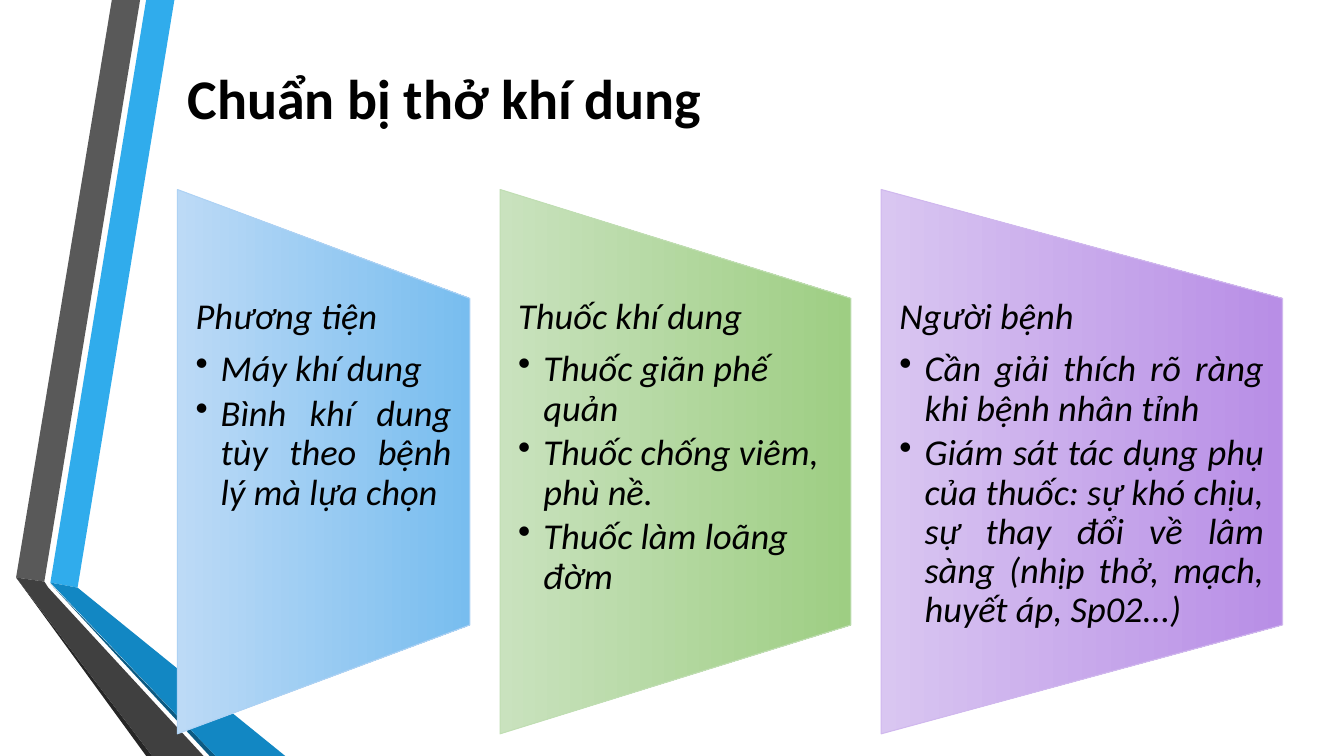
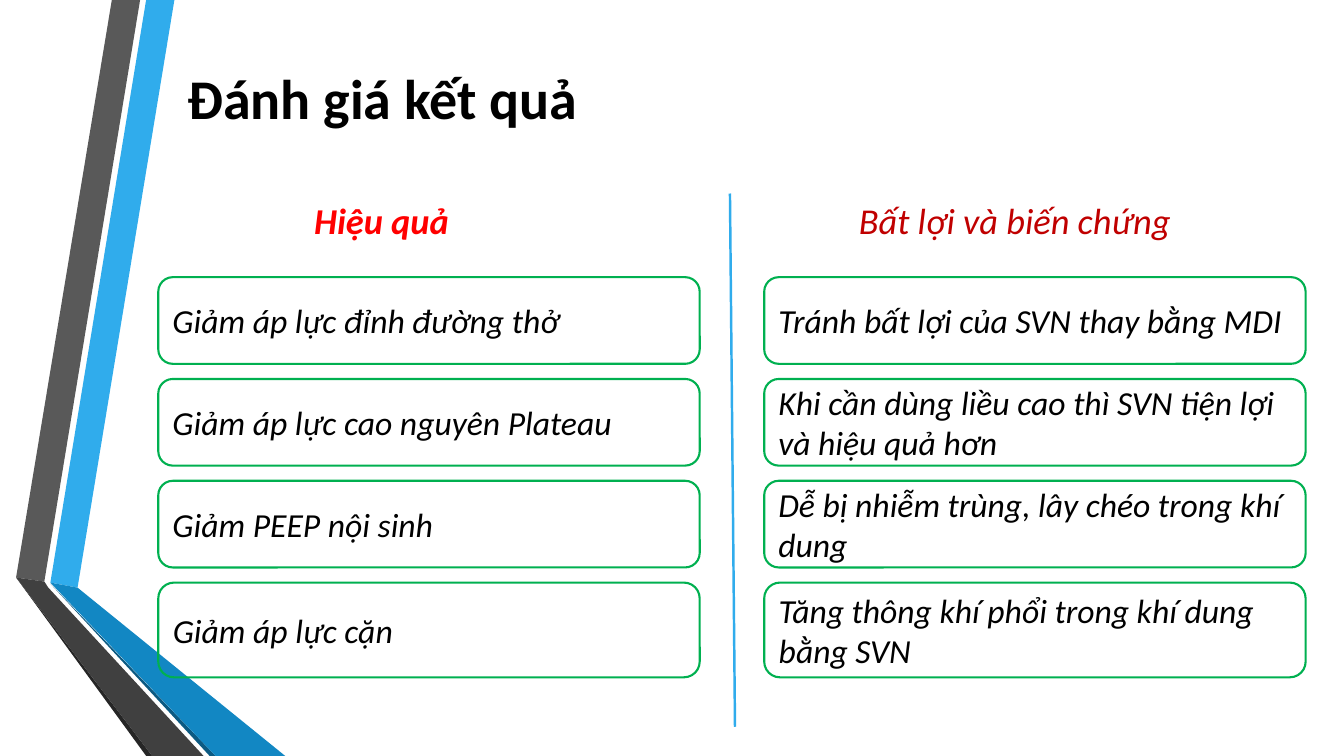
from dataclasses import dataclass

import pptx
import pptx.dml.color
import pptx.enum.shapes
import pptx.enum.text
import pptx.oxml.ns
import pptx.util
from lxml import etree

Inches = pptx.util.Inches
Pt = pptx.util.Pt
Shape = pptx.enum.shapes.MSO_SHAPE
Align = pptx.enum.text.PP_ALIGN
Anchor = pptx.enum.text.MSO_ANCHOR


@dataclass(frozen=True)
class Theme:
    font: str = "Calibri"
    title_size: float = 40
    heading_size: float = 26
    box_size: float = 24
    text: str = "000000"
    accent: str = "30ACEC"
    outline: str = "00B050"
    benefit: str = "FF0000"
    drawback: str = "C00000"
    blue: tuple = ("BCDAF6", "78BDEF", "AED2F4")
    green: tuple = ("C9E2BE", "9ECE83", "C0DEB3")
    violet: tuple = ("D9C6F1", "B88EE6", "D0B8EE")


THEME = Theme()

BANDS = [
    (THEME.accent, [(0.5, 5.78), (0.77, 5.83), (1.73, 0), (1.45, 0)]),
    ("595959", [(1.39, 0), (1.11, 0), (0.16, 5.73), (0.44, 5.77)]),
    ("262626", [(0.16, 5.73), (1.45, 7.5), (1.51, 7.5)]),
    ("0C5A82", [(0.5, 5.79), (2.08, 7.5), (2.14, 7.5)]),
    ("1287C3", [(0.5, 5.78), (2.14, 7.5), (2.83, 7.5), (0.77, 5.83)]),
    ("404040", [(2.02, 7.5), (0.48, 5.83), (0.44, 5.77), (0.16, 5.73), (1.51, 7.5)]),
]

CARDS = [
    (2.9, THEME.blue, Align.JUSTIFY, "Phương tiện",
     ["Máy khí dung", "Bình khí dung tùy theo bệnh lý mà lựa chọn"]),
    (3.48, THEME.green, Align.LEFT, "Thuốc khí dung",
     ["Thuốc giãn phế quản", "Thuốc chống viêm, phù nề.", "Thuốc làm loãng đờm"]),
    (3.98, THEME.violet, Align.JUSTIFY, "Người bệnh",
     ["Cần giải thích rõ ràng khi bệnh nhân tỉnh",
      "Giám sát tác dụng phụ của thuốc: sự khó chịu, sự thay đổi về lâm sàng "
      "(nhịp thở, mạch, huyết áp, Sp02...)"]),
]

RESULT_COLUMNS = [
    (1.57, ["Giảm áp lực đỉnh đường thở", "Giảm áp lực cao nguyên Plateau",
            "Giảm PEEP nội sinh", "Giảm áp lực cặn"]),
    (7.58, ["Tránh bất lợi của SVN thay bằng MDI",
            "Khi cần dùng liều cao thì SVN tiện lợi và hiệu quả hơn",
            "Dễ bị nhiễm trùng, lây chéo trong khí dung",
            "Tăng thông khí phổi trong khí dung bằng SVN"]),
]


def rgb(value):
    return pptx.dml.color.RGBColor.from_string(value)


def add_bullet(para, indent):
    properties = para._p.get_or_add_pPr()
    properties.set("marL", str(Inches(indent)))
    properties.set("indent", str(-Inches(indent)))
    etree.SubElement(properties, pptx.oxml.ns.qn("a:buChar"), char="•")


def write_text(para, text, size=THEME.heading_size, color=THEME.text, bold=False,
               italic=True, align=Align.LEFT, bullet=False, spacing=None, after=None):
    if bullet:
        para.level = 1
        add_bullet(para, 0.25)
    para.alignment = align
    if spacing is not None:
        para.line_spacing = spacing
    if after is not None:
        para.space_after = Pt(after)
    span = para.add_run()
    span.text = text
    font = span.font
    font.name, font.size = THEME.font, Pt(size)
    font.bold, font.italic = bold, italic
    font.color.rgb = rgb(color)


class SlideBuilder:
    def __init__(self):
        self.deck = pptx.Presentation()
        self.deck.slide_width = Inches(13.33)
        self.deck.slide_height = Inches(7.5)
        self.layout = self.deck.slide_layouts.get_by_name("Title Only")
        self.page = None

    def start(self, title):
        first = self.page is None
        self.page = self.deck.slides.add_slide(self.layout)
        if first:
            self.put_bands_on_layout()
        box = self.page.shapes.title
        box.left, box.top = Inches(1.76), Inches(0)
        box.width, box.height = Inches(10.96), Inches(1.92)
        box.text_frame.vertical_anchor = Anchor.MIDDLE
        write_text(box.text_frame.paragraphs[0], title, size=THEME.title_size,
                   bold=True, italic=False)

    def put_bands_on_layout(self):
        """Draw the bands on the page and move them to the shared layout."""
        for number, (color, points) in enumerate(BANDS):
            corners = [(Inches(x), Inches(y)) for x, y in points]
            builder = self.page.shapes.build_freeform(*corners[0])
            builder.add_line_segments(corners[1:], close=True)
            band = builder.convert_to_shape()
            band.shadow.inherit = False
            band.fill.solid()
            band.fill.fore_color.rgb = rgb(color)
            band.line.fill.background()
            band.element.nvSpPr.cNvPr.set("id", str(100 + number))
            self.layout.shapes.element.append(band.element)

    def shape(self, kind, left, top, width, height, line_color, line_width):
        shape = self.page.shapes.add_shape(
            kind, Inches(left), Inches(top), Inches(width), Inches(height))
        shape.shadow.inherit = False
        shape.line.color.rgb = rgb(line_color)
        shape.line.width = Pt(line_width)
        return shape

    def text_box(self, left, top, width, height):
        box = self.page.shapes.add_textbox(
            Inches(left), Inches(top), Inches(width), Inches(height))
        box.text_frame.word_wrap = True
        return box.text_frame

    def heading(self, text, left, width, **style):
        frame = self.text_box(left, 1.92, width, 0.54)
        write_text(frame.paragraphs[0], text, **style)

    def card(self, left, width, colors, align, heading, items):
        """Add a trapezoid, wide side left, with a heading and bullets."""
        top, height = 1.88, 5.4
        start, end, outline = colors
        shape = self.shape(
            Shape.FLOWCHART_MANUAL_OPERATION, left + (width - height) / 2,
            top + (height - width) / 2, height, width, outline, 0.75)
        shape.rotation = 270
        shape.fill.gradient()
        shape.fill.gradient_angle = 270
        for stop, color in zip(shape.fill.gradient_stops, (start, end)):
            stop.color.rgb = rgb(color)

        frame = self.text_box(left, top + height / 5, width, height * 0.6)
        frame.margin_left = frame.margin_right = Inches(0.18)
        frame.margin_top = frame.margin_bottom = 0
        write_text(frame.paragraphs[0], heading, align=align, spacing=0.9, after=9.1)
        for item in items:
            write_text(frame.add_paragraph(), item, align=align, bullet=True,
                       spacing=0.9, after=3.9)

    def result_box(self, text, left, top, height):
        shape = self.shape(Shape.ROUNDED_RECTANGLE, left, top, 5.37, height,
                           THEME.outline, 1.5)
        shape.fill.background()
        shape.text_frame.word_wrap = True
        shape.text_frame.vertical_anchor = Anchor.MIDDLE
        write_text(shape.text_frame.paragraphs[0], text, size=THEME.box_size)

    def divider(self, start, end):
        line = self.page.shapes.add_connector(
            pptx.enum.shapes.MSO_CONNECTOR.STRAIGHT,
            *(Inches(value) for value in start + end))
        line.line.color.rgb = rgb(THEME.accent)
        line.line.width = Pt(1.75)
        etree.SubElement(line.element.spPr, pptx.oxml.ns.qn("a:effectLst"))


def build_preparation(builder):
    builder.start("Chuẩn bị thở khí dung")
    left, gap = 1.76, 0.3
    for width, *content in CARDS:
        builder.card(left, width, *content)
        left += width + gap


def build_results(builder):
    builder.start("Đánh giá kết quả")
    builder.divider((7.24, 1.92), (7.29, 7.21))
    builder.heading("Hiệu quả", 2.57, 2.43, color=THEME.benefit, bold=True,
                    align=Align.CENTER)
    builder.heading("Bất lợi và biến chứng", 8.42, 3.34, color=THEME.drawback)
    heights, gap = (0.86, 0.86, 0.86, 0.94), 0.15
    for left, texts in RESULT_COLUMNS:
        top = 2.75
        for text, height in zip(texts, heights):
            builder.result_box(text, left, top, height)
            top += height + gap


def main():
    builder = SlideBuilder()
    build_preparation(builder)
    build_results(builder)
    builder.deck.save("out.pptx")


if __name__ == "__main__":
    main()
